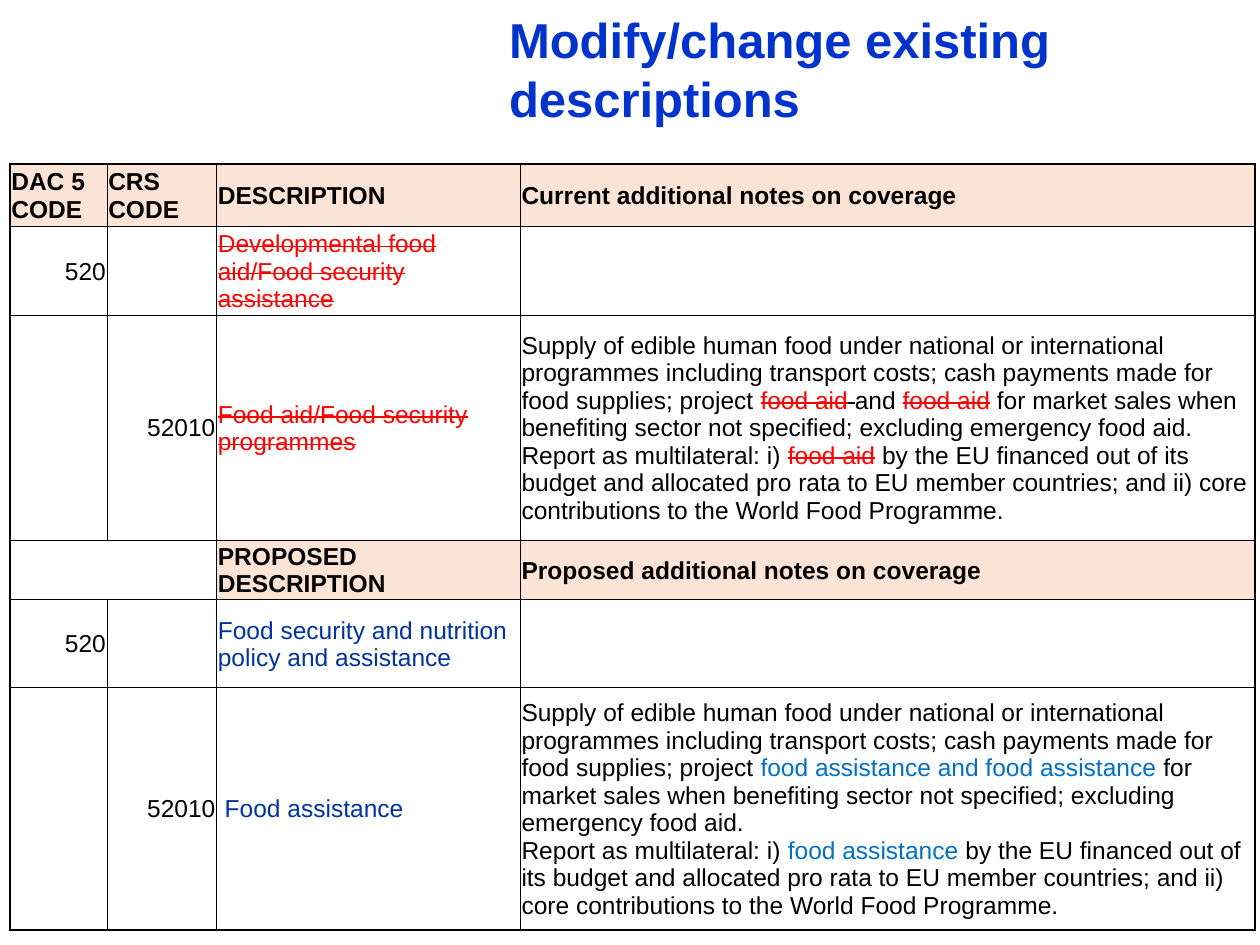
from lxml.etree import SubElement
from pptx import Presentation
from pptx.dml.color import RGBColor
from pptx.enum.text import MSO_ANCHOR, PP_ALIGN
from pptx.oxml.ns import qn
from pptx.util import Inches, Pt

BLACK = RGBColor(0x00, 0x00, 0x00)
RED = RGBColor(0xFF, 0x00, 0x00)
NAVY = RGBColor(0x00, 0x34, 0x9C)
BLUE = RGBColor(0x00, 0x70, 0xC0)
TITLE_BLUE = RGBColor(0x00, 0x33, 0xCC)
PEACH = RGBColor(0xFB, 0xE4, 0xD5)

TITLE = "Modify/change existing descriptions"
SUPPLY = (
    "Supply of edible human food under national or international programmes "
    "including transport costs; cash payments made for food supplies; project "
)
SALES = "for market sales when benefiting sector not specified; excluding emergency food aid."
REPORT = "\nReport as multilateral: i) "
FINANCED = (
    " by the EU financed out of its budget and allocated pro rata to EU member "
    "countries; and ii) core contributions to the World Food Programme."
)


def plain(text, color=BLACK):
    return (text, color, False)


def struck(text, color=RED):
    return (text, color, True)


CURRENT_NOTES = [
    plain(SUPPLY), struck("food aid"), struck(" ", BLACK), plain("and "),
    struck("food aid"), plain(" " + SALES + REPORT), struck("food aid"), plain(FINANCED),
]
PROPOSED_NOTES = [
    plain(SUPPLY), plain("food assistance and food assistance", BLUE),
    plain(" " + SALES + REPORT), plain("food assistance", BLUE), plain(FINANCED),
]
ROWS = [
    [[plain("DAC 5 CODE")], [plain("CRS CODE")], [plain("DESCRIPTION")],
     [plain("Current additional notes on coverage")]],
    [[plain("520")], [], [struck("Developmental food aid/Food security assistance")], []],
    [[], [plain("52010")], [struck("Food aid/Food security programmes")], CURRENT_NOTES],
    [[], [], [plain("PROPOSED DESCRIPTION")], [plain("Proposed additional notes on coverage")]],
    [[plain("520")], [], [plain("Food security and nutrition policy and assistance", NAVY)], []],
    [[], [plain("52010")], [plain(" "), plain("Food assistance", NAVY)], PROPOSED_NOTES],
]
HEADER_ROWS = (0, 3)
CODE_COLUMNS = (0, 1)
COLUMN_WIDTHS = [0.77, 0.87, 2.41, 5.83]
ROW_HEIGHTS = [0.5, 0.7, 1.79, 0.47, 0.7, 1.92]


def set_borders(cell, row, column):
    outer_sides = {
        "a:lnL": column == 0,
        "a:lnR": column == len(COLUMN_WIDTHS) - 1,
        "a:lnT": row == 0,
        "a:lnB": row == len(ROW_HEIGHTS) - 1,
    }
    properties = cell._tc.get_or_add_tcPr()
    for tag, outer in outer_sides.items():
        line = SubElement(properties, qn(tag), w=str(Pt(1 if outer else 0.5)))
        fill = SubElement(line, qn("a:solidFill"))
        SubElement(fill, qn("a:srgbClr"), val=str(BLACK))


def write_runs(paragraph, runs):
    for text, color, strike in runs:
        for index, part in enumerate(text.split("\n")):
            if index:
                paragraph.add_line_break()
            run = paragraph.add_run()
            run.text = part
            run.font.color.rgb = color
            if strike:
                run.font._element.set("strike", "sngStrike")


def format_cell(cell, row, column, runs):
    header = row in HEADER_ROWS
    set_borders(cell, row, column)
    if header and (runs or column not in CODE_COLUMNS):
        cell.fill.solid()
        cell.fill.fore_color.rgb = PEACH
    else:
        cell.fill.background()
    cell.margin_left = cell.margin_right = cell.margin_top = Inches(0.01)
    cell.margin_bottom = 0
    cell.vertical_anchor = MSO_ANCHOR.MIDDLE
    paragraph = cell.text_frame.paragraphs[0]
    paragraph.font.name = "Arial"
    paragraph.font.size = Pt(14)
    paragraph.font.bold = header
    if column in CODE_COLUMNS and not header:
        paragraph.alignment = PP_ALIGN.RIGHT
    write_runs(paragraph, runs)


def add_title(slide):
    title = slide.shapes.title
    title.left, title.top = Inches(3.94), Inches(0.02)
    title.width, title.height = Inches(6.06), Inches(1.04)
    title.text_frame.text = TITLE
    title.text_frame.word_wrap = True
    title.text_frame.vertical_anchor = MSO_ANCHOR.MIDDLE
    paragraph = title.text_frame.paragraphs[0]
    paragraph.alignment = PP_ALIGN.LEFT
    paragraph.font.name = "Arial"
    paragraph.font.size = Pt(28)
    paragraph.font.bold = True
    paragraph.font.color.rgb = TITLE_BLUE


def add_codes_table(slide):
    table = slide.shapes.add_table(
        len(ROW_HEIGHTS), len(COLUMN_WIDTHS), Inches(0.08), Inches(1.3),
        Inches(sum(COLUMN_WIDTHS)), Inches(sum(ROW_HEIGHTS)),
    ).table
    table.first_row = table.horz_banding = False
    for column, width in zip(table.columns, COLUMN_WIDTHS):
        column.width = Inches(width)
    for row, height in zip(table.rows, ROW_HEIGHTS):
        row.height = Inches(height)
    for row, cells in enumerate(ROWS):
        for column, runs in enumerate(cells):
            format_cell(table.cell(row, column), row, column, runs)
    table.cell(3, 0).merge(table.cell(3, 1))


def main():
    presentation = Presentation()
    presentation.slide_width = Inches(10)
    presentation.slide_height = Inches(7.5)
    slide = presentation.slides.add_slide(presentation.slide_layouts[5])
    add_codes_table(slide)
    add_title(slide)
    presentation.save("out.pptx")


if __name__ == "__main__":
    main()
